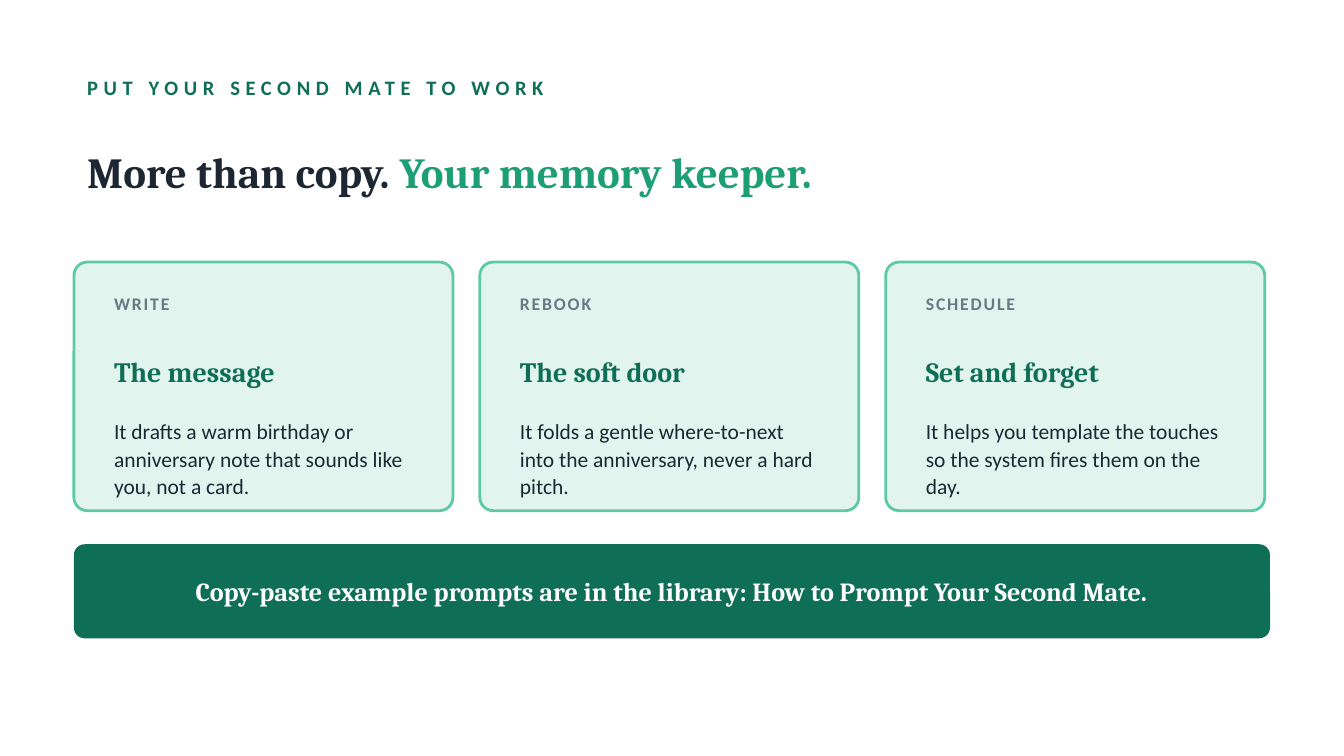
import pptx
import pptx.dml.color
import pptx.enum.shapes
import pptx.enum.text
import pptx.util

Inches = pptx.util.Inches
Align = pptx.enum.text.PP_ALIGN


def color(code):
    return pptx.dml.color.RGBColor.from_string(code)


class Deck:
    HEAD, BODY = "Cambria", "Calibri"
    INK, GRAY, WHITE = "1C2733", "6B7785", "FFFFFF"
    GREEN, BRIGHT, EDGE, PALE = "0F6E56", "1D9E75", "5DCAA5", "E1F5EE"

    def __init__(self, wide, high):
        self.file = pptx.Presentation()
        self.file.slide_width = Inches(wide)
        self.file.slide_height = Inches(high)
        self.slide = self.file.slides.add_slide(self.file.slide_layouts[6])
        fill = self.slide.background.fill
        fill.solid()
        fill.fore_color.rgb = color(self.WHITE)

    def panel(self, box, fill, round, edge=None):
        kind = pptx.enum.shapes.MSO_SHAPE.ROUNDED_RECTANGLE
        shape = self.slide.shapes.add_shape(kind, *map(Inches, box))
        shape.shadow.inherit = False
        # Corner radius in inches, as a share of the shorter side
        shape.adjustments[0] = round / min(box[2:])
        shape.fill.solid()
        shape.fill.fore_color.rgb = color(fill)
        if edge:
            shape.line.color.rgb = color(edge)
            shape.line.width = pptx.util.Pt(1.5)
        else:
            shape.line.fill.background()

    def text(self, box, parts, size, font, bold=True, track=0,
             align=Align.LEFT, lead=None):
        """Add one paragraph; parts holds (words, colour) pairs."""
        frame = self.slide.shapes.add_textbox(*map(Inches, box)).text_frame
        frame.word_wrap = True
        frame.vertical_anchor = pptx.enum.text.MSO_ANCHOR.MIDDLE
        para = frame.paragraphs[0]
        para.alignment = align
        if lead:
            para.line_spacing = lead
        for words, tint in parts:
            run = para.add_run()
            run.text = words
            run.font.size = pptx.util.Pt(size)
            run.font.name = font
            run.font.bold = bold
            run.font.color.rgb = color(tint)
            if track:
                run.font._element.set("spc", str(track * 100))

    def card(self, left, top, label, title, body):
        self.panel((left, top, 2.82, 1.85), self.PALE, 0.1, self.EDGE)
        inner, wide = left + 0.2, 2.45
        self.text((inner, top + 0.16, wide, 0.3), [(label, self.GRAY)],
                  9.5, self.BODY, track=1)
        self.text((inner, top + 0.46, wide, 0.7), [(title, self.GREEN)],
                  15, self.HEAD)
        self.text((inner, top + 1.18, wide, 0.55), [(body, self.INK)],
                  11.5, self.BODY, bold=False, lead=1.08)


CARDS = [
    ("WRITE", "The message",
     "It drafts a warm birthday or anniversary note that sounds like you, "
     "not a card."),
    ("REBOOK", "The soft door",
     "It folds a gentle where-to-next into the anniversary, never a hard "
     "pitch."),
    ("SCHEDULE", "Set and forget",
     "It helps you template the touches so the system fires them on the "
     "day."),
]


def main():
    # Widescreen, 16 to 9
    deck = Deck(10, 10 * 9 / 16)
    left, wide = 0.55, 8.9

    # Heading
    deck.text((left, 0.5, wide, 0.3),
              [("PUT YOUR SECOND MATE TO WORK", deck.GREEN)],
              11, deck.BODY, track=3)
    deck.text((left, 0.85, wide, 0.85),
              [("More than copy. ", deck.INK),
               ("Your memory keeper.", deck.BRIGHT)], 23, deck.HEAD)

    # Three cards
    for i, card in enumerate(CARDS):
        deck.card(left + i * 3.02, 1.95, *card)

    # Closing banner
    deck.panel((left, 4.05, wide, 0.7), deck.GREEN, 0.08)
    deck.text((0.8, 4.05, 8.4, 0.7),
              [("Copy-paste example prompts are in the library: "
                "How to Prompt Your Second Mate.", deck.WHITE)],
              14, deck.HEAD, align=Align.CENTER)

    deck.file.save("out.pptx")


if __name__ == "__main__":
    main()
